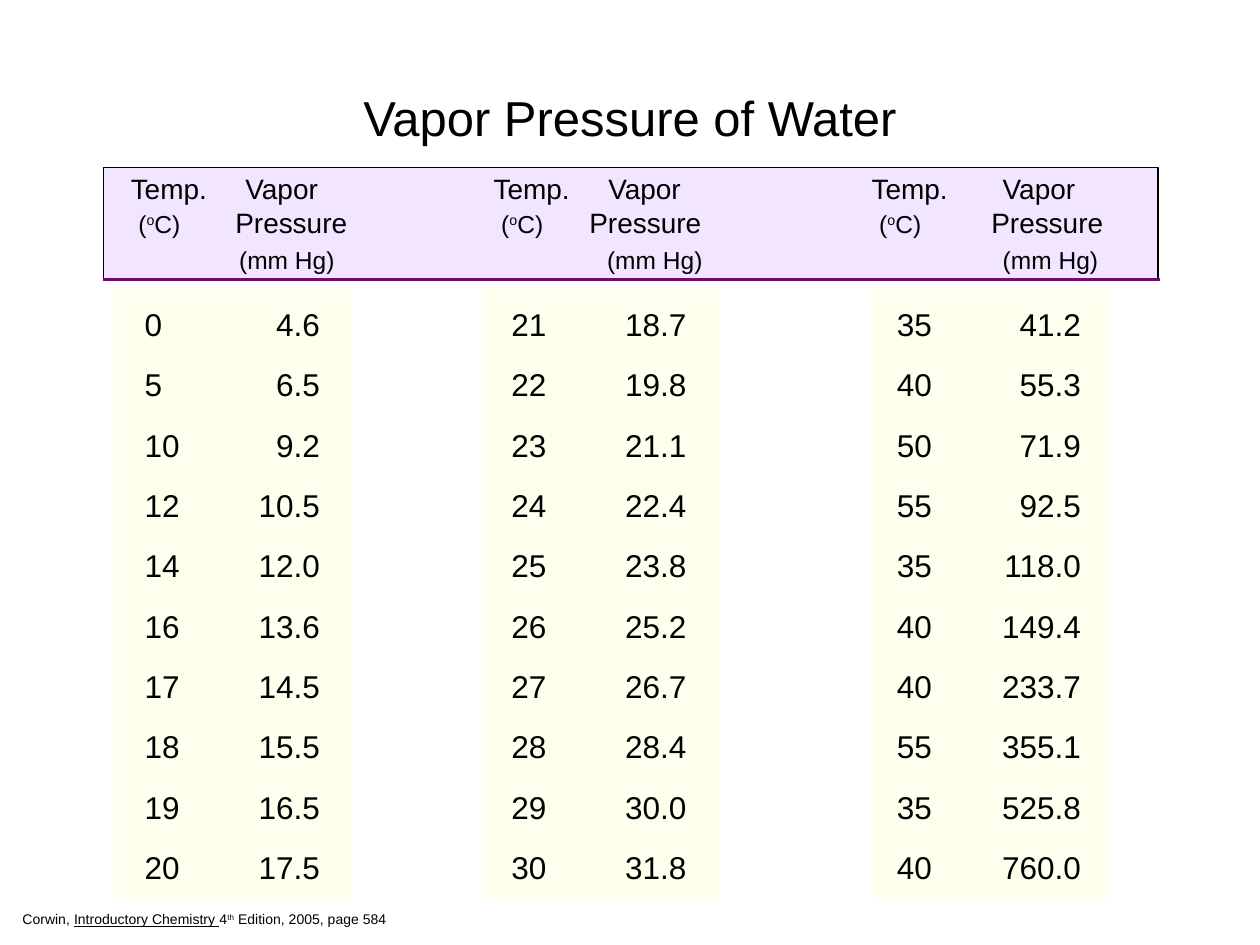
from pptx import Presentation
from pptx.dml.color import RGBColor
from pptx.enum.shapes import MSO_CONNECTOR as Connector, MSO_SHAPE as Shape
from pptx.enum.text import MSO_ANCHOR as Anchor, PP_ALIGN as Align
from pptx.oxml.ns import qn
from pptx.util import Inches, Pt
from lxml.etree import SubElement

ROWS = [
    ("0", "4.6", "21", "18.7", "35", "41.2"),
    ("5", "6.5", "22", "19.8", "40", "55.3"),
    ("10", "9.2", "23", "21.1", "50", "71.9"),
    ("12", "10.5", "24", "22.4", "55", "92.5"),
    ("14", "12.0", "25", "23.8", "35", "118.0"),
    ("16", "13.6", "26", "25.2", "40", "149.4"),
    ("17", "14.5", "27", "26.7", "40", "233.7"),
    ("18", "15.5", "28", "28.4", "55", "355.1"),
    ("19", "16.5", "29", "30.0", "35", "525.8"),
    ("20", "17.5", "30", "31.8", "40", "760.0"),
]
ROW_STOPS = [(1.39, "r"), (2.91, "l"), (4.3, "r"), (5.97, "l"), (7.43, "r")]
PANEL_LEFTS = [0.9, 3.83, 6.92]


def color(hex_value):
    """Turn a hex string into a colour."""
    return RGBColor.from_string(hex_value)


def set_values(target, values):
    """Set every attribute named in a dict of format values."""
    for name, value in values.items():
        setattr(target, name, value)


def add_rectangle(slide, box, fill, line=None, opacity=None):
    """Add a filled rectangle, optionally outlined or translucent."""
    shape = slide.shapes.add_shape(Shape.RECTANGLE, *map(Inches, box))
    shape.shadow.inherit = False
    shape.fill.solid()
    shape.fill.fore_color.rgb = color(fill)
    if opacity:
        fill_color = shape.fill._xPr.find(qn("a:solidFill"))[0]
        SubElement(fill_color, qn("a:alpha"), val=str(opacity * 1000))
    if line:
        shape.line.color.rgb = color(line)
        shape.line.width = Pt(0.75)
    else:
        shape.line.fill.background()
    return shape


def add_rule(slide, start, end, line):
    """Add a straight line without a shadow."""
    rule = slide.shapes.add_connector(Connector.STRAIGHT, *map(Inches, start + end))
    rule.line.color.rgb = color(line)
    rule.line.width = Pt(2)
    SubElement(rule._element.spPr, qn("a:effectLst"))


def add_text_box(slide, box, **values):
    """Add a text box and return its text frame."""
    frame = slide.shapes.add_textbox(*map(Inches, box)).text_frame
    set_values(frame, values)
    return frame


def add_paragraph(frame, runs, stops=(), **values):
    """Fill the next paragraph with (text, size, format) runs and tab stops."""
    first = frame.paragraphs[0]
    paragraph = frame.add_paragraph() if first.runs else first
    set_values(paragraph, {"alignment": Align.LEFT, **values})
    if stops:
        tabs = SubElement(paragraph._p.get_or_add_pPr(), qn("a:tabLst"))
        for position, side in stops:
            SubElement(tabs, qn("a:tab"), pos=str(Inches(position)), algn=side)
    for text, size, *style in runs:
        run = paragraph.add_run()
        run.text = text
        set_values(run.font, {"name": "Arial", "size": Pt(size), "underline": "underline" in style or None})
        run.font.color.rgb = color("000000")
        if "superscript" in style:
            run._r.get_or_add_rPr().set("baseline", "30000")


def add_header(slide):
    """Add the band of column headings with its purple rule."""
    frame = add_rectangle(slide, (0.82, 1.33, 8.37, 0.88), "F2E5FF", line="000000").text_frame
    set_values(frame, {"word_wrap": True, "vertical_anchor": Anchor.MIDDLE})
    unit = [("\t(", 14), ("o", 14, "superscript"), ("C)", 14), ("\tPressure", 16)]
    lines = [
        ([("\tTemp.\tVapor", 16)] * 3, (0.12, 1.03, 3, 3.91, 6, 7.04), 0),
        (unit * 3, (0.18, 0.95, 3.06, 3.76, 6.06, 6.95), 0),
        ([("\t(mm Hg)", 14)] * 3, (0.98, 3.9, 7.04), 3.6),
    ]
    for runs, positions, gap in lines:
        stops = [(position, "l") for position in positions]
        add_paragraph(frame, runs, stops, space_before=Pt(gap))
    add_rule(slide, (0.82, 2.22), (9.21, 2.22), "800080")


def add_readings(slide):
    """Add the rows of temperatures and vapor pressures."""
    frame = add_text_box(slide, (1.05, 2.37, 7.65, 4.9), word_wrap=True)
    for index, row in enumerate(ROWS):
        gap = Pt(12.9 if index else 0)
        add_paragraph(frame, [("\t".join(row), 18)], ROW_STOPS, space_before=gap)


def main():
    """Build and save the slide."""
    presentation = Presentation()
    set_values(presentation, {"slide_width": Inches(10), "slide_height": Inches(7.5)})
    slide = presentation.slides.add_slide(presentation.slide_layouts[6])
    for left in PANEL_LEFTS:
        add_rectangle(slide, (left, 2.29, 1.89, 4.84), "FFFFAB", opacity=20)
    title = add_text_box(slide, (0.5, 0.3, 9, 1.25), word_wrap=True, vertical_anchor=Anchor.MIDDLE)
    add_paragraph(title, [("Vapor Pressure of Water", 28)], alignment=Align.CENTER)
    add_header(slide)
    add_readings(slide)
    citation = add_text_box(slide, (0.08, 7.18, 3.1, 0.23), word_wrap=False)
    add_paragraph(citation, [
        ("Corwin, ", 8),
        ("Introductory Chemistry ", 8, "underline"),
        ("4", 8),
        ("th", 8, "superscript"),
        (" Edition, 2005, page 584", 8),
    ])
    presentation.save("out.pptx")


if __name__ == "__main__":
    main()
